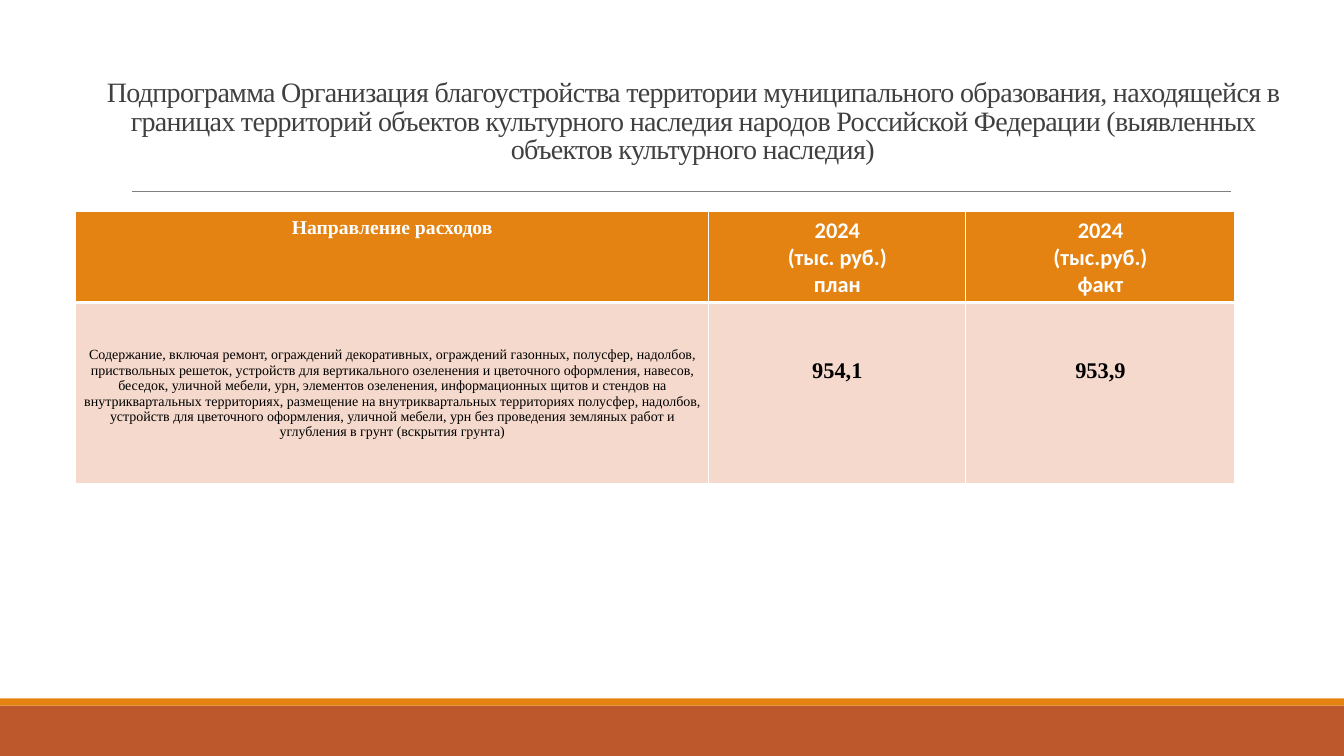
from dataclasses import dataclass

from lxml import etree
from pptx import Presentation
from pptx import util as u
from pptx.dml.color import RGBColor
from pptx.enum import shapes, text
from pptx.oxml import ns


@dataclass(frozen=True)
class Theme:
    serif: str = "Times New Roman"
    sans: str = "Calibri"
    white: str = "FFFFFF"
    black: str = "000000"
    ink: str = "404040"
    rule: str = "808080"
    orange: str = "E48312"
    rust: str = "BD582C"
    pale: str = "F5D9CC"
    title: int = 20
    figure: int = 16
    head: int = 14
    body: int = 10


T = Theme()
TITLE = ("Подпрограмма Организация благоустройства территории муниципального "
         "образования, находящейся в границах территорий объектов культурного "
         "наследия народов Российской Федерации (выявленных объектов "
         "культурного наследия)")
ITEM = ("Содержание, включая ремонт, ограждений декоративных, ограждений "
        "газонных, полусфер, надолбов, приствольных решеток, устройств для "
        "вертикального озеленения и цветочного оформления, навесов, беседок, "
        "уличной мебели, урн, элементов озеленения, информационных щитов и "
        "стендов на внутриквартальных территориях, размещение на "
        "внутриквартальных территориях полусфер, надолбов, устройств для "
        "цветочного оформления, уличной мебели, урн без проведения земляных "
        "работ и углубления в грунт (вскрытия грунта)")


def rgb(code):
    return RGBColor.from_string(code)


def write(frame, words, size, font=T.serif, color=T.black, bold=False,
          lead=None, track=None):
    """Fill a text frame with centred paragraphs, one for each line of words."""
    for i, line in enumerate(words.split("\n")):
        para = frame.paragraphs[0] if i == 0 else frame.add_paragraph()
        para.alignment = text.PP_ALIGN.CENTER
        if lead:
            para.line_spacing = lead
        run = para.add_run()
        run.text = line
        run.font.size = u.Pt(size)
        run.font.name = font
        run.font.bold = bold
        run.font.color.rgb = rgb(color)
        if track:
            run.font._element.set("spc", str(round(track * 100)))


def bar(slide, box, color):
    shape = slide.shapes.add_shape(shapes.MSO_SHAPE.RECTANGLE,
                                   *map(u.Inches, box))
    shape.shadow.inherit = False
    shape.fill.solid()
    shape.fill.fore_color.rgb = rgb(color)
    shape.line.fill.background()


def footer(slide, box, strip=0.07):
    """Draw the wide band with a thin strip resting on its top edge."""
    left, top, width, height = box
    bar(slide, box, T.rust)
    bar(slide, (left, top - strip, width, strip), T.orange)


def rule(slide, left, top, width):
    line = slide.shapes.add_connector(
        shapes.MSO_CONNECTOR.STRAIGHT,
        *map(u.Inches, (left, top, left + width, top)))
    line.line.color.rgb = rgb(T.rule)
    line.line.width = u.Pt(0.5)
    etree.SubElement(line._element.spPr, ns.qn("a:effectLst"))


def heading(slide, box):
    frame = slide.shapes.add_textbox(*map(u.Inches, box)).text_frame
    frame.word_wrap = True
    frame.vertical_anchor = text.MSO_ANCHOR.BOTTOM
    write(frame, TITLE, T.title, color=T.ink, lead=0.85, track=-0.5)


def border(cell, **widths):
    """Set white cell borders; each key is a side (L, R, T, B) in points."""
    props = cell._tc.get_or_add_tcPr()
    for side, width in widths.items():
        line = etree.SubElement(props, ns.qn("a:ln" + side),
                                w=str(u.Pt(width)))
        fill = etree.SubElement(line, ns.qn("a:solidFill"))
        etree.SubElement(fill, ns.qn("a:srgbClr"), val=T.white)


def dress(cell, color, inset, middle=False, **edges):
    border(cell, **edges)
    cell.fill.solid()
    cell.fill.fore_color.rgb = rgb(color)
    (cell.margin_left, cell.margin_top,
     cell.margin_right, cell.margin_bottom) = map(u.Inches, inset)
    cell.vertical_anchor = (text.MSO_ANCHOR.MIDDLE if middle
                            else text.MSO_ANCHOR.TOP)


def costs(slide, box):
    """Place the table of spending, planned and actual."""
    columns, rows = (6.28, 2.55, 2.67), (0.9, 1.8)
    table = slide.shapes.add_table(len(rows), len(columns),
                                   *map(u.Inches, box)).table
    table.first_row = table.horz_banding = False
    for column, width in zip(table.columns, columns):
        column.width = u.Inches(width)
    for row, height in zip(table.rows, rows):
        row.height = u.Inches(height)

    pad = (0.1, 0.05, 0.1, 0.05)
    heads = (("Направление расходов", T.head, T.serif),
             ("2024\n(тыс. руб.)\nплан", T.figure, T.sans),
             ("2024\n(тыс.руб.)\nфакт", T.figure, T.sans))
    for col, (words, size, font) in enumerate(heads):
        cell = table.cell(0, col)
        dress(cell, T.orange, pad, L=1, R=1, T=1, B=3)
        write(cell.text_frame, words, size, font, T.white, bold=True)

    low = (0.1, 0.56, 0.1, 0.05)
    tight = (0.01, 0.01, 0.01, 0)
    values = ((ITEM, T.body, tight), ("954,1", T.figure, low),
              ("953,9", T.figure, low))
    for col, (words, size, inset) in enumerate(values):
        cell = table.cell(1, col)
        dress(cell, T.pale, inset, middle=col == 0, L=1, R=1, T=3, B=1)
        write(cell.text_frame, words, size, bold=col > 0)


def main():
    deck = Presentation()
    deck.slide_width, deck.slide_height = u.Inches(13.33), u.Inches(7.5)
    slide = deck.slides.add_slide(deck.slide_layouts[6])
    footer(slide, (0, 7, 13.33, 0.5))
    rule(slide, 1.31, 1.9, 10.9)
    heading(slide, (0.75, 0.29, 12.24, 1.4))
    costs(slide, (0.75, 2.1, 11.5, 2.7))
    deck.save("out.pptx")


if __name__ == "__main__":
    main()
